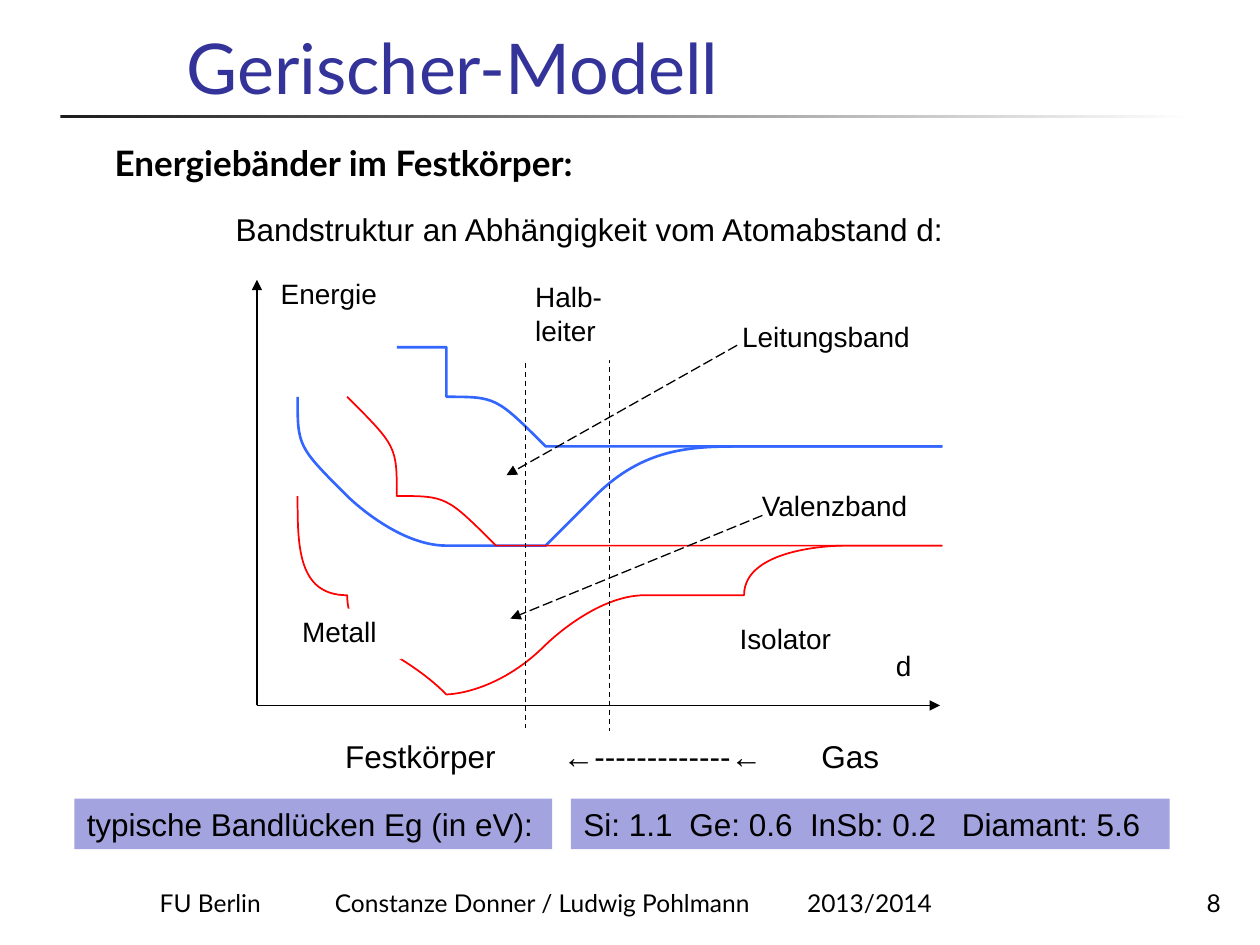
from lxml.etree import SubElement
from pptx import Presentation
from pptx.dml.color import RGBColor
from pptx.enum.dml import MSO_LINE_DASH_STYLE as Dash
from pptx.enum.shapes import MSO_CONNECTOR as Connector, MSO_SHAPE as Preset
from pptx.enum.text import MSO_ANCHOR as Anchor, MSO_AUTO_SIZE as AutoSize, PP_ALIGN as Align
from pptx.oxml.ns import qn
from pptx.util import Cm, Pt

BLACK = RGBColor(0x00, 0x00, 0x00)
WHITE = RGBColor(0xFF, 0xFF, 0xFF)
CHARCOAL = RGBColor(0x1C, 0x1C, 0x1C)
NAVY = RGBColor(0x33, 0x33, 0x99)
BLUE = RGBColor(0x33, 0x66, 0xFF)
RED = RGBColor(0xFF, 0x00, 0x00)
LAVENDER = RGBColor(0xA3, 0xA3, 0xE0)


def spline(knots):
    """Bézier points of a smooth curve through the knots, without the first knot."""
    tangents = [((c[0] - a[0]) / 6, (c[1] - a[1]) / 6) for a, c in zip(knots, knots[2:])]
    before = [(x - dx, y - dy) for (x, y), (dx, dy) in zip(knots[1:], tangents)]
    after = [(x + dx, y + dy) for (x, y), (dx, dy) in zip(knots[1:], tangents)]

    def midpoint(a, b):
        return (a[0] + b[0]) / 2, (a[1] + b[1]) / 2

    leaving = [midpoint(knots[0], before[0])] + after
    arriving = before + [midpoint(knots[-1], after[-1])]
    return [point for segment in zip(leaving, arriving, knots[1:]) for point in segment]


class SlideBuilder:
    heading_font = "Lato"
    body_font = "Arial"

    def __init__(self, slide):
        self.slide = slide
        self.shapes = slide.shapes

    def title(self, text, box):
        shape = self.shapes.title
        shape.left, shape.top, shape.width, shape.height = map(Cm, box)
        self.set_text(shape, text, 40, self.heading_font, NAVY, anchor=Anchor.BOTTOM)

    def set_text(self, shape, text, size, font=None, color=BLACK, bold=False,
                 align=Align.LEFT, anchor=Anchor.TOP, inset=0.25, tabs=()):
        frame = shape.text_frame
        frame.text = text
        frame.word_wrap = True
        frame.auto_size = AutoSize.NONE
        frame.vertical_anchor = anchor
        frame.margin_left = Cm(inset)
        for paragraph in frame.paragraphs:
            paragraph.alignment = align
            paragraph.font.name = font or self.body_font
            paragraph.font.size = Pt(size)
            paragraph.font.bold = bold
            paragraph.font.color.rgb = color
            if tabs:
                tab_list = paragraph._p.get_or_add_pPr().makeelement(qn("a:tabLst"), {})
                for position in tabs:
                    SubElement(tab_list, qn("a:tab"), pos=str(Cm(position)), algn="l")
                # Tab stops come before the default run properties
                paragraph._p.pPr.find(qn("a:defRPr")).addprevious(tab_list)

    def text(self, text, box, size=18, fill=None, **style):
        shape = self.shapes.add_textbox(*map(Cm, box))
        if fill is not None:
            shape.fill.solid()
            shape.fill.fore_color.rgb = fill
        self.set_text(shape, text, size, **style)

    def fading_rule(self, box):
        shape = self.shapes.add_shape(Preset.RECTANGLE, *map(Cm, box))
        shape.shadow.inherit = False
        shape.line.fill.background()
        shape.fill.gradient()
        shape.fill.gradient_angle = 0
        for stop, color in zip(shape.fill.gradient_stops, (CHARCOAL, WHITE)):
            stop.color.rgb = color

    def line(self, start, end, dash=None, arrow=False):
        connector = self.shapes.add_connector(Connector.STRAIGHT, *map(Cm, start + end))
        connector.line.color.rgb = BLACK
        connector.line.width = Pt(0.75)
        if dash:
            connector.line.dash_style = dash
        properties = connector._element.spPr
        if arrow:
            SubElement(properties.find(qn("a:ln")), qn("a:tailEnd"), type="triangle")
        SubElement(properties, qn("a:effectLst"))

    def curve(self, knots, color, width):
        builder = self.shapes.build_freeform(*knots[0], scale=Cm(1))
        builder.add_line_segments(spline(knots), close=False)
        shape = builder.convert_to_shape()
        # Join each three straight steps into one Bézier segment
        steps = list(shape._element.iter(qn("a:lnTo")))
        for first in range(0, len(steps), 3):
            bezier = steps[first].makeelement(qn("a:cubicBezTo"), {})
            steps[first].addprevious(bezier)
            for step in steps[first:first + 3]:
                bezier.append(step[0])
                step.getparent().remove(step)
        shape.shadow.inherit = False
        shape.fill.background()
        shape.line.color.rgb = color
        shape.line.width = Pt(width)


def main():
    presentation = Presentation()
    presentation.slide_width, presentation.slide_height = Cm(25.4), Cm(19.05)
    slide = SlideBuilder(presentation.slides.add_slide(presentation.slide_layouts[5]))
    lato = slide.heading_font

    # Heading
    slide.fading_rule((1.22, 2.31, 22.86, 0.08))
    slide.title("Gerischer-Modell", (3.51, 0.58, 21.34, 1.73))
    slide.text("Energiebänder im Festkörper:", (1.09, 2.72, 13.21, 1.12), 20,
               font=lato, bold=True, inset=1.22)
    slide.text("Bandstruktur an Abhängigkeit vom Atomabstand d:", (4.5, 4.11, 15.2, 1.02),
               anchor=Anchor.MIDDLE)

    # Axes and their labels
    origin = (5.18, 14.22)
    for axis_end in ((5.18, 5.64), (18.95, 14.22)):
        slide.line(origin, axis_end, arrow=True)
    slide.text("d", (17.81, 12.95, 0.99, 1.02), 16, fill=WHITE)
    slide.text("Energie", (5.41, 5.46, 2.59, 1.02), 16, fill=WHITE)

    # Band edges: the lower red edge is the lower blue one moved down
    conduction_top = [(8.23, 6.6), (8.74, 7.19), (9.45, 7.92), (10.54, 8.56),
                      (11.73, 8.94), (13.28, 9.12), (18.42, 9.12), (19.13, 9.12)]
    conduction_bottom = [(19.15, 9.09), (17.22, 9.09), (14.55, 9.22), (12.47, 9.8),
                         (10.69, 11.07), (8.59, 11.25), (6.91, 9.78), (5.82, 8.08)]
    valence_top = [(6.91, 7.59), (7.47, 8.48), (8.26, 9.6), (9.5, 10.57),
                   (10.82, 11.15), (12.55, 11.4), (18.26, 11.4), (19.08, 11.4)]
    valence_bottom = [(x + 0.05, y + 2.31) for x, y in conduction_bottom]
    for knots in (conduction_top, conduction_bottom):
        slide.curve(knots, BLUE, 1.5)
    for knots in (valence_top, valence_bottom):
        slide.curve(knots, RED, 1)

    # Semiconductor limits
    for x, top, bottom in ((10.59, 6.4, 14.68), (12.29, 6.48, 14.73)):
        slide.line((x, top), (x, bottom), dash=Dash.DASH)

    # Region and band labels
    for label, box in (
        ("Isolator", (14.66, 12.4, 2.59, 1.02)),
        ("Metall", (5.84, 12.27, 2.26, 1.02)),
        ("Halb-\nleiter", (10.54, 5.51, 2.03, 1.75)),
        ("Leitungsband", (14.71, 6.32, 4.29, 1.02)),
        ("Valenzband", (15.11, 9.73, 3.68, 1.02)),
    ):
        slide.text(label, box, 16, fill=WHITE)
    for start, end in (((14.86, 6.96), (10.21, 9.58)), ((15.37, 10.39), (10.29, 12.47))):
        slide.line(start, end, dash=Dash.LONG_DASH, arrow=True)

    # Typical band gaps
    slide.text("typische Bandlücken Eg (in eV):", (1.5, 16.1, 9.63, 1.02),
               fill=LAVENDER, anchor=Anchor.MIDDLE)
    slide.text("Si: 1.1\tGe: 0.6\tInSb: 0.2\tDiamant: 5.6", (11.51, 16.1, 12.07, 1.02),
               fill=LAVENDER, anchor=Anchor.MIDDLE, tabs=(2.14, 4.57, 7.63))

    # From gas to solid
    for label, left, width in (("Gas", 16.31, 1.68), ("Festkörper", 6.71, 3.58),
                               ("←-------------←", 11.1, 4.6)):
        slide.text(label, (left, 14.73, width, 1.02))

    # Footer
    slide.text("FU Berlin\tConstanze Donner / Ludwig Pohlmann\t2013/2014",
               (0.89, 17.35, 20.19, 1.27), 14, font=lato, anchor=Anchor.BOTTOM,
               inset=2.33, tabs=(3.53, 13.05))
    slide.text("8", (21.51, 17.35, 3.35, 1.27), 14, font=lato,
               align=Align.RIGHT, anchor=Anchor.BOTTOM)

    presentation.save("out.pptx")


if __name__ == "__main__":
    main()
